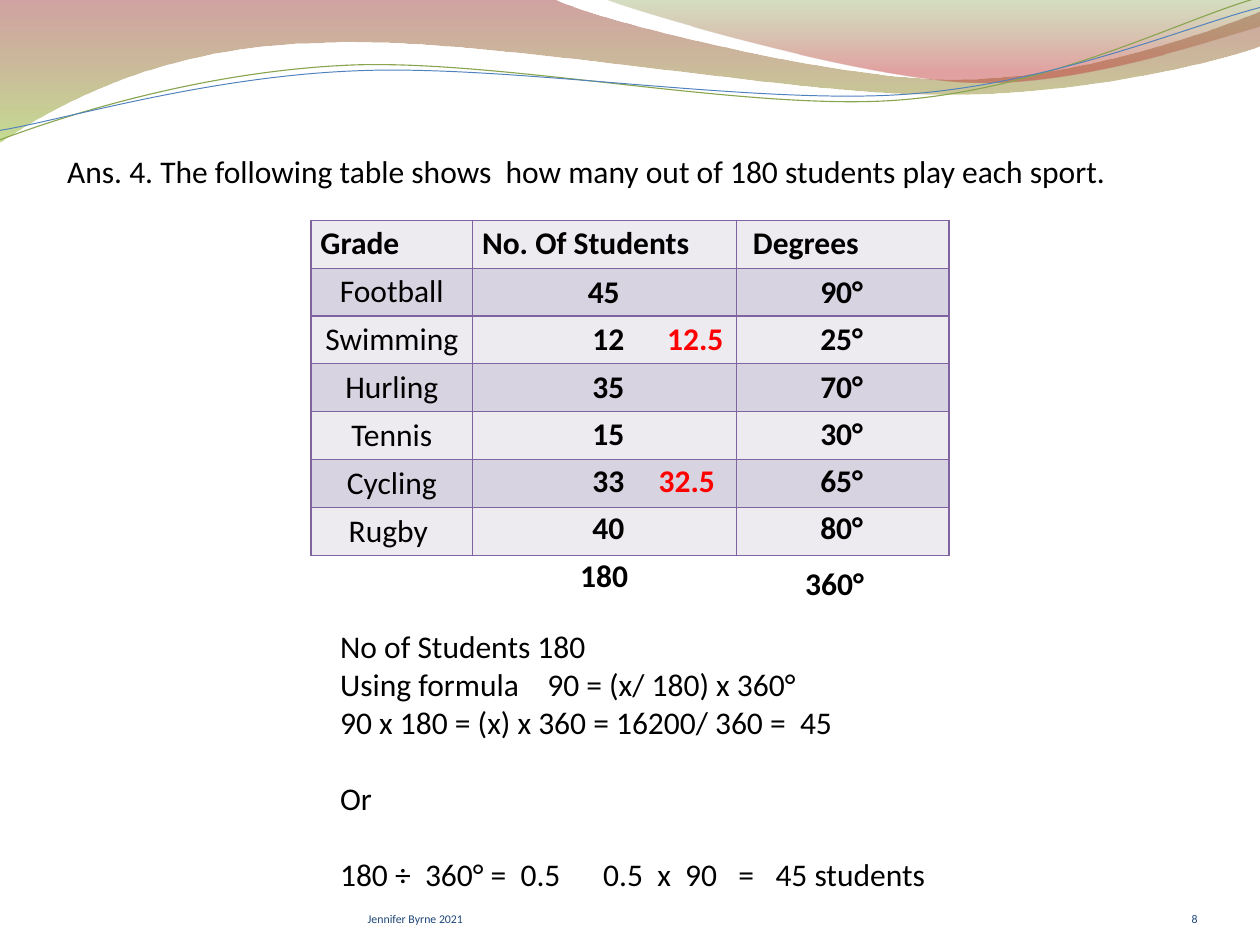
"""Builds the sports survey answer slide with its table, worked values and wave header."""
import pptx
import pptx.dml.color
import pptx.enum.text
import pptx.oxml
import pptx.oxml.ns
import pptx.util
from pptx.util import Inches, Pt

ALIGN = pptx.enum.text.PP_ALIGN
ANCHOR = pptx.enum.text.MSO_ANCHOR
COLOURS = {
    "black": "000000", "red": "FF0000", "footer": "1E4677", "border": "8064A2",
    "light": "EDEAF0", "dark": "D8D3E0", "green line": "89A54F", "blue line": "4F81BD",
    "maroon": "973330", "lime": "95C238", "olive": "769537", "rose": "BE3330",
}
TITLE = "Ans. 4. The following table shows  how many out of 180 students play each sport."
HEADINGS = ("Grade", "No. Of Students", " Degrees")
SPORTS = [
    ("Football", "45", "90°"), ("Swimming", "12", "25°"), ("Hurling", "35", "70°"),
    ("Tennis", "15", "30°"), ("Cycling", "33", "65°"), ("Rugby ", "40", "80°"),
]
EXACT = [("12.5", 1, 6.96), ("32.5", 4, 6.87)]
TOTALS = [("180", 6.04, 5.83, 0.71), ("360°", 8.42, 5.92, 0.83)]
WORKING = [
    ("No of Students 180", 0),
    ("Using formula    90 = (x/ 180) x 360°", 0),
    ("90 x 180 = (x) x 360 = 16200/ 360 =  45", 0),
    ("Or", 29),
    ("180 ÷  360° =  0.5      0.5  x  90   =   45 students", 29),
]
FOOTERS = [("Jennifer Byrne 2021", 3.89, 4.89, ALIGN.LEFT), ("8", 11.56, 1.11, ALIGN.RIGHT)]
COLUMNS = (1.71, 2.79, 2.25)
TABLE_LEFT, TABLE_TOP, ROW = 3.29, 2.33, 0.5

BANDS = [
    ([(0, -0.01), (5.87, -0.01),
      (6.34, 0.22, 8.85, 0.84, 10.11, 0.84), (11.37, 0.84, 12.78, 0.34, 13.33, 0.12),
      (13.35, 0.48),
      (13.11, 0.58, 11.6, 1.01, 9.94, 1), (8.29, 1, 5.09, 0.37, 3.43, 0.45),
      (1.72, 0.47, 0.61, 1.1, -0.01, 1.51)],
     [(0, "maroon", 45), (1, "lime", 55)]),
    ([(6.39, -0.01),
      (6.79, 0.15, 9.09, 0.82, 10.25, 0.87), (11.41, 0.92, 12.82, 0.42, 13.33, 0.28),
      (13.33, 0)],
     [(0, "olive", 30), (0.8, "rose", 45)]),
]
WAVES = [
    ([(0, 1.48), (0.64, 1.24, 2.1, 0.76, 3.69, 0.69), (5.27, 0.62, 7.9, 1.18, 9.5, 1.06),
      (11.11, 0.94, 12.51, 0.2, 13.3, -0.02)], "green line", 0.85),
    ([(0, 1.38), (0.63, 1.28, 2.18, 0.81, 3.77, 0.75), (5.37, 0.68, 7.96, 1.11, 9.56, 1),
      (11.15, 0.89, 12.55, 0.28, 13.33, 0.08)], "blue line", 0.75),
]


def rgb(name):
    return pptx.dml.color.RGBColor.from_string(COLOURS[name])


def xml(tag, attributes="", content=""):
    return pptx.oxml.parse_xml(
        f'<a:{tag} {pptx.oxml.ns.nsdecls("a")} {attributes}>{content}</a:{tag}>')


def write(paragraph, text, size=24, colour="black", bold=False, align=ALIGN.LEFT):
    paragraph.alignment = align
    run = paragraph.add_run()
    run.text = text
    run.font.name, run.font.size, run.font.bold = "Calibri", Pt(size), bold
    run.font.color.rgb = rgb(colour)


def set_margins(frame, top=0):
    frame.margin_left = frame.margin_right = frame.margin_bottom = 0
    frame.margin_top = Inches(top)
    frame.vertical_anchor = ANCHOR.BOTTOM
    frame.word_wrap = True


def add_box(slide, left, top, width, height):
    return slide.shapes.add_textbox(*map(Inches, (left, top, width, height))).text_frame


def add_fitted_box(slide, left, top, width, height):
    frame = add_box(slide, left, top, width, height)
    frame.word_wrap = False
    frame.auto_size = pptx.enum.text.MSO_AUTO_SIZE.SHAPE_TO_FIT_TEXT
    return frame


def add_value(slide, text, left, top, width, colour="black"):
    frame = add_fitted_box(slide, left, top, width, ROW)
    write(frame.paragraphs[0], text, colour=colour, bold=True)


def add_curve(slide, segments, close):
    points = [(Inches(segment[i]), Inches(segment[i + 1]))
              for segment in segments for i in range(0, len(segment), 2)]
    builder = slide.shapes.build_freeform(*points[0])
    builder.add_line_segments(points[1:], close=close)
    shape = builder.convert_to_shape()
    shape.shadow.inherit = False
    edges = iter(list(shape.element.iter(pptx.oxml.ns.qn("a:lnTo"))))
    for segment in segments[1:]:
        edge = next(edges)
        if len(segment) == 6:
            bezier = xml("cubicBezTo")
            edge.addprevious(bezier)
            for part in (edge, next(edges), next(edges)):
                bezier.append(part[0])
                part.getparent().remove(part)
    return shape


def add_header(slide):
    for segments, stops in BANDS:
        band = add_curve(slide, segments, True)
        band.line.fill.background()
        band.fill.gradient()
        band.fill.gradient_angle = 270
        for stop, (position, colour, _) in zip(band.fill.gradient_stops, stops):
            stop.position = position
            stop.color.rgb = rgb(colour)
        tints = list(band.element.spPr.iter(pptx.oxml.ns.qn("a:srgbClr")))
        for tint, (_, _, opacity) in zip(tints, stops):
            tint.append(xml("alpha", f'val="{opacity * 1000}"'))
    for segments, colour, weight in WAVES:
        wave = add_curve(slide, segments, False)
        wave.fill.background()
        wave.line.color.rgb = rgb(colour)
        wave.line.width = Pt(weight)


def add_borders(cell):
    properties = cell._tc.get_or_add_tcPr()
    paint = f'<a:solidFill><a:srgbClr val="{COLOURS["border"]}"/></a:solidFill>'
    for index, side in enumerate(("lnL", "lnR", "lnT", "lnB")):
        properties.insert(index, xml(side, f'w="{Pt(1)}"', paint))


def add_sports_table(slide):
    row_count = len(SPORTS) + 1
    table = slide.shapes.add_table(
        row_count, len(COLUMNS), Inches(TABLE_LEFT), Inches(TABLE_TOP),
        Inches(sum(COLUMNS)), Inches(ROW * row_count)).table
    for column, width in zip(table.columns, COLUMNS):
        column.width = Inches(width)
    for row in range(row_count):
        for column in range(len(COLUMNS)):
            cell = table.cell(row, column)
            cell.fill.solid()
            cell.fill.fore_color.rgb = rgb("dark" if row % 2 else "light")
            add_borders(cell)
    for column, heading in enumerate(HEADINGS):
        write(table.cell(0, column).text_frame.paragraphs[0], heading, bold=True)
    for row, (sport, _, _) in enumerate(SPORTS, 1):
        write(table.cell(row, 0).text_frame.paragraphs[0], sport, align=ALIGN.CENTER)


def add_answers(slide):
    first = TABLE_TOP + ROW
    for row, (_, _, degrees) in enumerate(SPORTS):
        add_value(slide, degrees, 8.58, first + ROW * row, 0.66)
    for row, (_, students, _) in enumerate(SPORTS):
        add_value(slide, students, 6.17 if row else 6.12, first + ROW * row, 0.54)
    for text, row, left in EXACT:
        add_value(slide, text, left, first + ROW * row, 0.8, "red")
    for total in TOTALS:
        add_value(slide, *total)


def add_working(slide):
    frame = add_fitted_box(slide, 3.5, 6.59, 6.5, 2.93)
    for index, (text, gap) in enumerate(WORKING):
        paragraph = frame.add_paragraph() if index else frame.paragraphs[0]
        paragraph.space_before = Pt(gap)
        write(paragraph, text)


def main():
    deck = pptx.Presentation()
    deck.slide_width, deck.slide_height = Inches(13.33), Inches(10)
    slide = deck.slides.add_slide(deck.slide_layouts[5])
    add_header(slide)
    title = slide.shapes.title
    slide.shapes.element.append(title.element)
    title.left, title.top, title.width, title.height = map(Inches, (0.71, 0.34, 12, 1.67))
    set_margins(title.text_frame, 0.05)
    write(title.text_frame.paragraphs[0], TITLE)
    add_sports_table(slide)
    add_working(slide)
    add_answers(slide)
    for text, left, width, align in FOOTERS:
        frame = add_box(slide, left, 9.27, width, 0.53)
        set_margins(frame)
        write(frame.paragraphs[0], text, 9, "footer", align=align)
    deck.save("out.pptx")


if __name__ == "__main__":
    main()
